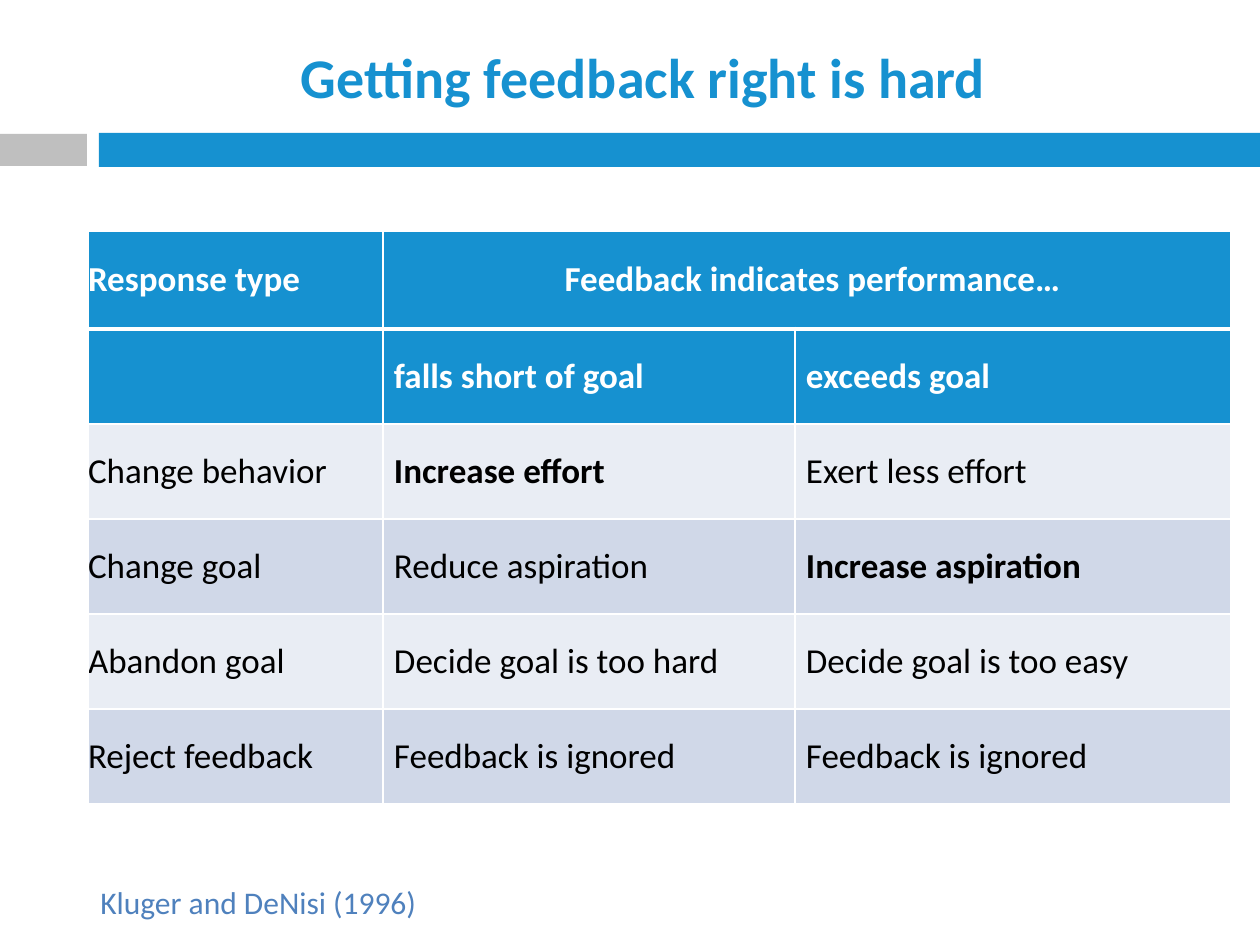
from lxml import etree
from pptx import Presentation
from pptx.dml.color import RGBColor
from pptx.enum.shapes import MSO_SHAPE
from pptx.enum.text import MSO_ANCHOR, MSO_AUTO_SIZE, PP_ALIGN
from pptx.oxml.ns import qn
from pptx.util import Pt

RECTANGLE = MSO_SHAPE.RECTANGLE
MIDDLE = MSO_ANCHOR.MIDDLE
LEFT, CENTER = PP_ALIGN.LEFT, PP_ALIGN.CENTER
FIT_SHAPE = MSO_AUTO_SIZE.SHAPE_TO_FIT_TEXT

BLUE = RGBColor(0x16, 0x91, 0xD0)
GRAY = RGBColor(0xBF, 0xBF, 0xBF)
WHITE = RGBColor(0xFF, 0xFF, 0xFF)
BLACK = RGBColor(0x00, 0x00, 0x00)
LIGHT_BAND = RGBColor(0xE9, 0xED, 0xF4)
DARK_BAND = RGBColor(0xD0, 0xD8, 0xE8)
CITATION_BLUE = RGBColor(0x4F, 0x81, 0xBD)

FONT = "Calibri"
PX_PER_INCH = 126
COLUMN_WIDTHS = [295, 412, 436]
HEADER_HEIGHT, ROW_HEIGHT = 98, 95
HEADER_ROWS = 2
CELL_INDENT = 11
RESPONSES = [
    ["Response type", "Feedback indicates performance…", ""],
    ["", "falls short of goal", "exceeds goal"],
    ["Change behavior", "Increase effort", "Exert less effort"],
    ["Change goal", "Reduce aspiration", "Increase aspiration"],
    ["Abandon goal", "Decide goal is too hard", "Decide goal is too easy"],
    ["Reject feedback", "Feedback is ignored", "Feedback is ignored"],
]
EMPHASIZED = {"Increase effort", "Increase aspiration"}


def px(length):
    return round(length * 914400 / PX_PER_INCH)


def style_text(para, size, color, bold=False):
    for span in para.runs:
        span.font.name = FONT
        span.font.size = Pt(size)
        span.font.bold = bold
        span.font.color.rgb = color


def add_band(page, left, top, width, height):
    """Gray tab and blue bar that run across the page below the title."""
    bars = [
        (left + 99, top, width - 99, height, BLUE),
        (left, top + 1, 87, height - 2, GRAY),
    ]
    for bar_left, bar_top, bar_width, bar_height, color in bars:
        bar = page.shapes.add_shape(
            RECTANGLE, px(bar_left), px(bar_top), px(bar_width), px(bar_height))
        bar.shadow.inherit = False
        bar.fill.solid()
        bar.fill.fore_color.rgb = color
        bar.line.fill.background()


def add_title(page, left, top, width, height):
    title = page.shapes.title
    title.left, title.top = px(left), px(top)
    title.width, title.height = px(width), px(height)
    frame = title.text_frame
    frame.text = "Getting feedback right is hard"
    frame.vertical_anchor = MIDDLE
    para = frame.paragraphs[0]
    para.alignment = CENTER
    style_text(para, 32, BLUE, bold=True)


def set_borders(cell, bottom_width):
    """White rules on all sides; they must come before the cell's fill."""
    properties = cell._tc.get_or_add_tcPr()
    for side, width in (("L", 1), ("R", 1), ("T", 1), ("B", bottom_width)):
        line = etree.SubElement(properties, qn(f"a:ln{side}"), w=str(Pt(width)))
        fill = etree.SubElement(line, qn("a:solidFill"))
        etree.SubElement(fill, qn("a:srgbClr"), val=str(WHITE))


def fill_cell(cell, text, row, column):
    is_header = row < HEADER_ROWS
    set_borders(cell, 3 if row == 0 else 1)
    cell.fill.solid()
    band = DARK_BAND if row % 2 else LIGHT_BAND
    cell.fill.fore_color.rgb = BLUE if is_header else band
    cell.margin_left = cell.margin_right = 0
    cell.margin_top = cell.margin_bottom = 0
    cell.vertical_anchor = MIDDLE
    if not text:
        return
    cell.text = text
    para = cell.text_frame.paragraphs[0]
    para.space_after = Pt(4)
    para.alignment = CENTER if cell.is_merge_origin else LEFT
    if column:
        para._p.get_or_add_pPr().set("marL", str(px(CELL_INDENT)))
    style_text(para, 20, WHITE if is_header else BLACK,
               bold=is_header or text in EMPHASIZED)


def add_response_table(page, left, top):
    heights = [HEADER_HEIGHT] + [ROW_HEIGHT] * (len(RESPONSES) - 1)
    table = page.shapes.add_table(
        len(heights), len(COLUMN_WIDTHS), px(left), px(top),
        px(sum(COLUMN_WIDTHS)), px(sum(heights))).table
    for column, width in zip(table.columns, COLUMN_WIDTHS):
        column.width = px(width)
    for row, height in zip(table.rows, heights):
        row.height = px(height)
    table.cell(0, 1).merge(table.cell(0, 2))
    for row, texts in enumerate(RESPONSES):
        for column, text in enumerate(texts):
            fill_cell(table.cell(row, column), text, row, column)


def add_citation(page, left, top, width, height):
    box = page.shapes.add_textbox(px(left), px(top), px(width), px(height))
    frame = box.text_frame
    frame.word_wrap = True
    frame.auto_size = FIT_SHAPE
    frame.text = "Kluger and DeNisi (1996)"
    style_text(frame.paragraphs[0], 18, CITATION_BLUE)


def main():
    deck = Presentation()
    deck.slide_width, deck.slide_height = px(1260), px(945)
    page = deck.slides.add_slide(deck.slide_layouts[5])  # Title Only
    add_band(page, 0, 133, 1260, 34)
    add_title(page, 98, 33, 1091, 86)
    add_response_table(page, 88, 231)
    add_citation(page, 88, 877, 583, 50)
    deck.save("out.pptx")


if __name__ == "__main__":
    main()
